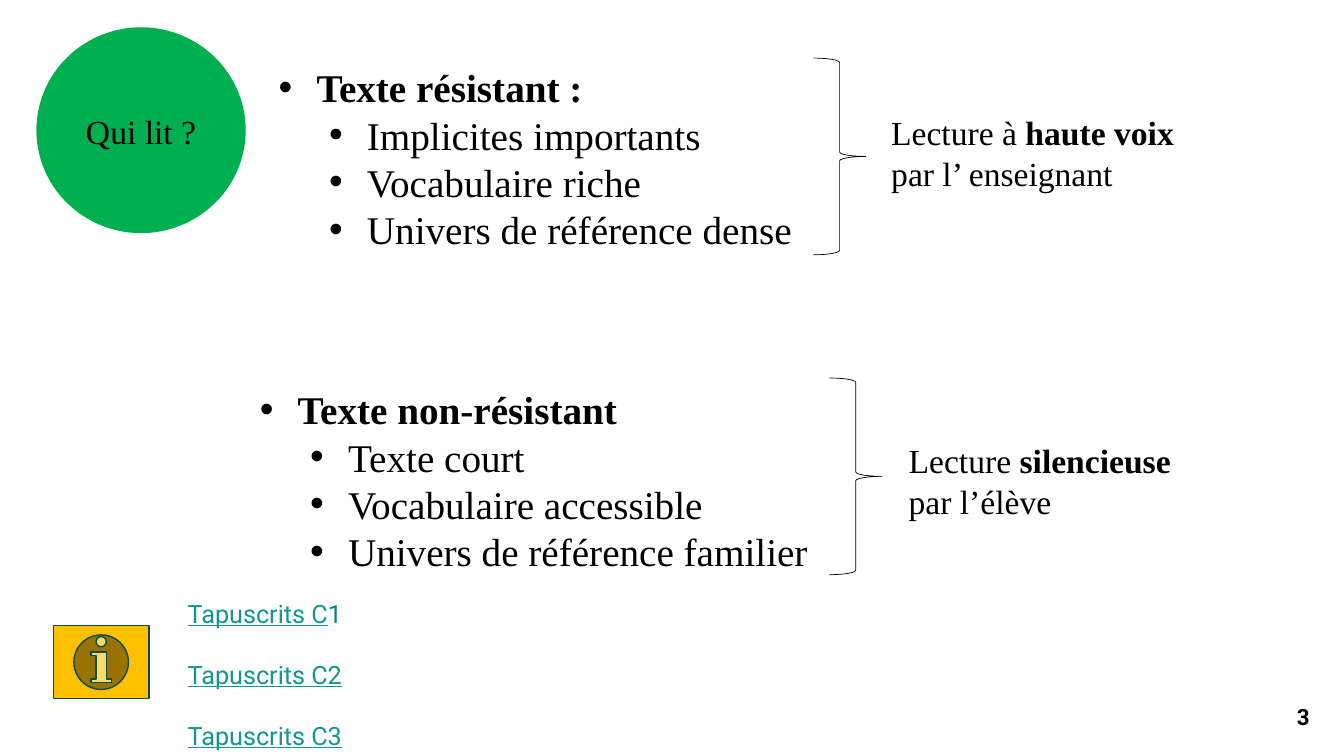
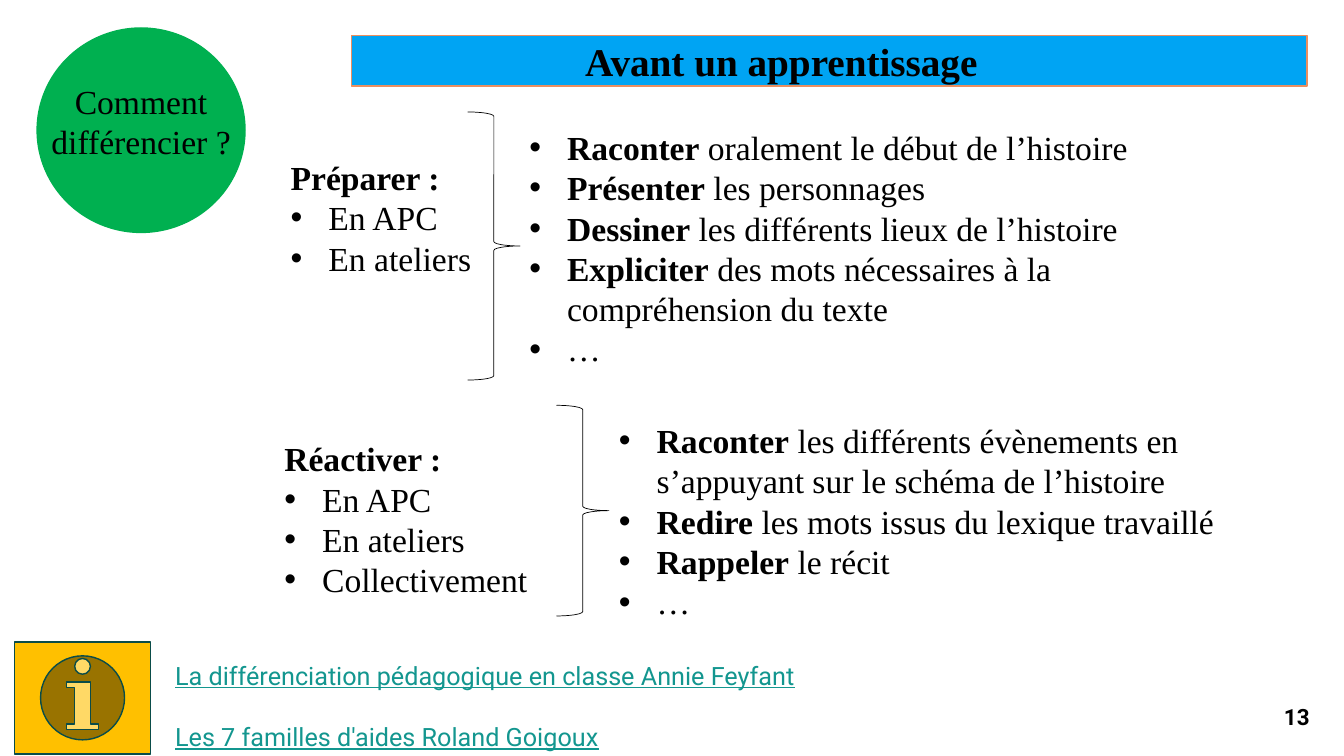
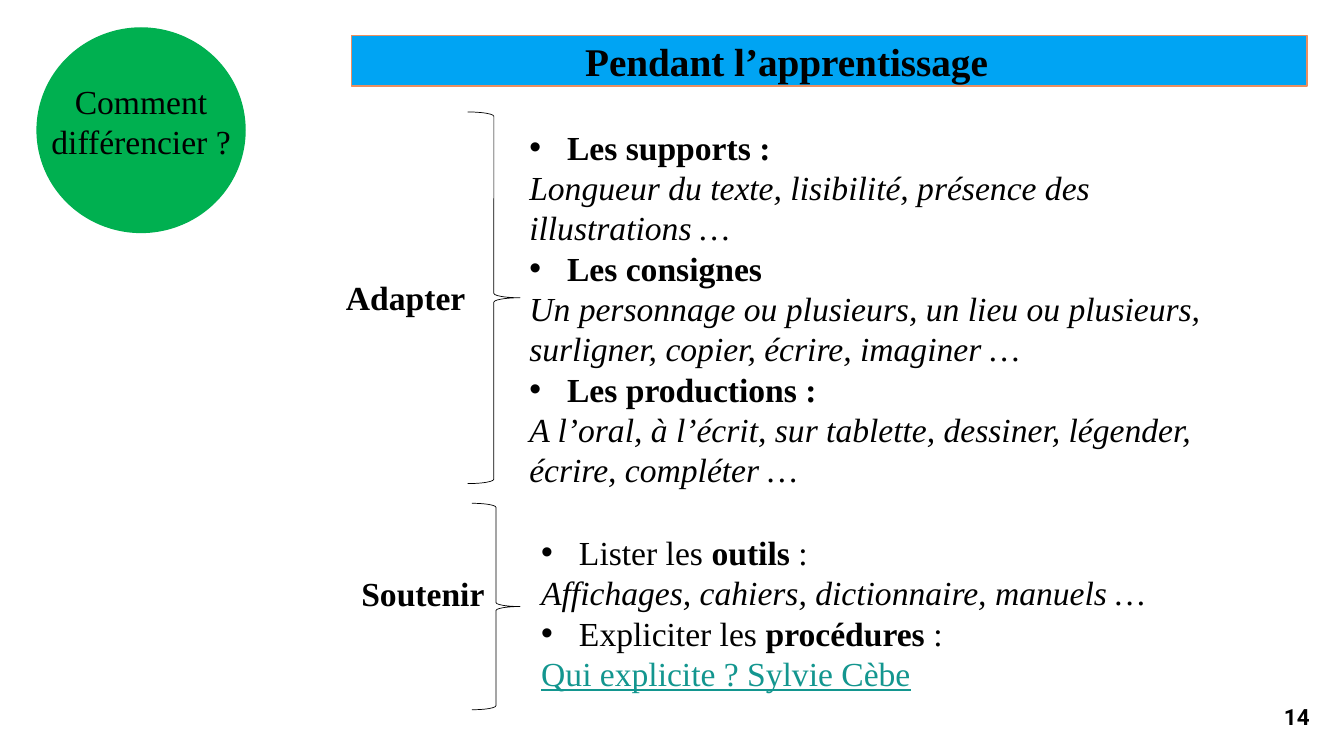
from dataclasses import dataclass

from lxml import etree
from pptx import Presentation
from pptx.dml.color import RGBColor
from pptx.enum import shapes, text
from pptx.oxml import ns
from pptx.util import Pt

# Shared look
BLACK = RGBColor(0x00, 0x00, 0x00)
GREEN = RGBColor(0x00, 0xB0, 0x50)
BLUE = RGBColor(0x00, 0xA4, 0xF3)
CORAL = RGBColor(0xEB, 0x8F, 0x60)
AMBER = RGBColor(0xFF, 0xC0, 0x00)
PINE = RGBColor(0x0A, 0x4C, 0x49)
TEAL = RGBColor(0x13, 0x96, 0x8F)
JADE = RGBColor(0x10, 0x83, 0x7D)
SERIF = "Times New Roman"
SANS = "Roboto"
INDENT = 27
STEP = 36
KIND = shapes.MSO_SHAPE


@dataclass(frozen=True)
class Run:
    text: str
    bold: bool = False
    slant: bool = False
    color: RGBColor = BLACK
    under: bool = False


@dataclass(frozen=True)
class Para:
    runs: tuple[Run, ...]
    level: int = 0  # 0 means no bullet


@dataclass(frozen=True)
class Box:
    left: float
    top: float
    width: float
    height: float

    def place(self) -> tuple:
        return Pt(self.left), Pt(self.top), Pt(self.width), Pt(self.height)


@dataclass(frozen=True)
class Block:
    box: Box
    paras: tuple[Para, ...]
    size: float = 24
    face: str = SERIF
    gap: float = 0
    align: text.PP_ALIGN = text.PP_ALIGN.LEFT
    anchor: text.MSO_ANCHOR = text.MSO_ANCHOR.TOP


@dataclass(frozen=True)
class Page:
    number: str
    topic: str
    drop: float  # top of the topic text
    blocks: tuple[Block, ...]
    braces: tuple[Box, ...]
    title: str = ""
    info: Box | None = None


# Short forms for text
def bold(words: str) -> Run:
    return Run(words, bold=True)


def link(words: str) -> Run:
    return Run(words, color=TEAL, under=True)


def line(*runs: str | Run, level: int = 0) -> Para:
    return Para(tuple(Run(r) if isinstance(r, str) else r for r in runs), level)


def item(*runs: str | Run) -> Para:
    return line(*runs, level=1)


def note(words: str) -> Para:
    return line(Run(words, slant=True))


def group(head: str, *items: str) -> tuple[Para, ...]:
    return (item(bold(head)), *(line(i, level=2) for i in items))


def phase(head: str, *items: str) -> tuple[Para, ...]:
    return (line(bold(head)), *(item(i) for i in items))


# Drawing
def style(font, run: Run) -> None:
    font.bold = run.bold
    font.italic = run.slant
    font.underline = run.under
    font.color.rgb = run.color


def bullet(para, level: int) -> None:
    para.level = level - 1
    props = para._p.get_or_add_pPr()
    props.set("marL", str(Pt(INDENT + STEP * (level - 1))))
    props.set("indent", str(-Pt(INDENT)))
    etree.SubElement(props, ns.qn("a:buFont")).set("typeface", "Arial")
    etree.SubElement(props, ns.qn("a:buChar")).set("char", "•")


def write(frame, block: Block) -> None:
    frame.word_wrap = True
    frame.vertical_anchor = block.anchor
    for n, data in enumerate(block.paras):
        para = frame.add_paragraph() if n else frame.paragraphs[0]
        if data.level:
            bullet(para, data.level)
        para.alignment = block.align
        para.space_after = Pt(block.gap)
        para.font.name = block.face
        para.font.size = Pt(block.size)
        if len(data.runs) == 1:
            style(para.font, data.runs[0])
        for part in data.runs:
            run = para.add_run()
            run.text = part.text
            if len(data.runs) > 1:
                style(run.font, part)


def label(slide, block: Block) -> None:
    write(slide.shapes.add_textbox(*block.box.place()).text_frame, block)


def figure(slide, kind: KIND, box: Box, edge: RGBColor,
           fill: RGBColor | None = None, weight: float = 1):
    shape = slide.shapes.add_shape(kind, *box.place())
    shape.shadow.inherit = False
    if fill is None:
        shape.fill.background()
    else:
        shape.fill.solid()
        shape.fill.fore_color.rgb = fill
    shape.line.color.rgb = edge
    shape.line.width = Pt(weight)
    return shape


def draw(slide, page: Page) -> None:
    # Topic disc
    figure(slide, KIND.OVAL, Box(26.5, 20, 148.5, 146), GREEN, GREEN)
    label(slide, Block(Box(26.5, page.drop, 148.5, 36), (line(page.topic),),
                       align=text.PP_ALIGN.CENTER))
    # Title band
    if page.title:
        box = Box(251, 25.5, 682.5, 36)
        band = figure(slide, KIND.RECTANGLE, box, CORAL, BLUE)
        band.text_frame.margin_left = Pt(167)
        write(band.text_frame, Block(box, (line(bold(page.title)),), size=28,
                                     anchor=text.MSO_ANCHOR.MIDDLE))
    # Content
    for brace in page.braces:
        figure(slide, KIND.RIGHT_BRACE, brace, BLACK, weight=0.5)
    for block in page.blocks:
        label(slide, block)
    if page.info:
        figure(slide, KIND.ACTION_BUTTON_INFORMATION, page.info, PINE, AMBER)
    # Page number
    label(slide, Block(Box(894, 497.5, 48.5, 29), (line(bold(page.number)),),
                       size=16, face=SANS, align=text.PP_ALIGN.RIGHT,
                       anchor=text.MSO_ANCHOR.MIDDLE))


# Content of the slides
PAGES = (
    Page(
        "3", "Qui lit ?", 75.5,
        blocks=(
            Block(Box(192, 42, 450, 143), group(
                "Texte résistant :", "Implicites importants",
                "Vocabulaire riche", "Univers de référence dense"), size=28),
            Block(Box(178.5, 272, 433, 143), group(
                "Texte non-résistant", "Texte court",
                "Vocabulaire accessible", "Univers de référence familier"),
                size=28),
            Block(Box(629.5, 76.5, 250, 65.5), (
                line("Lecture à ", bold("haute voix "), "par l’ enseignant"),)),
            Block(Box(642, 311, 211, 65.5), (
                line("Lecture ", bold("silencieuse "), "par l’élève"),)),
            Block(Box(127, 423.5, 290, 116), (
                line(link("Tapuscrits C"), Run("1", color=JADE)),
                line(link("Tapuscrits C2")),
                line(link("Tapuscrits C3"))), size=18, face=SANS, gap=22),
        ),
        braces=(Box(581, 41.5, 37.5, 140.5), Box(592.5, 270, 37.5, 140.5)),
        info=Box(38, 447, 68.5, 52),
    ),
    Page(
        "13", "Comment différencier ?", 54,
        title="Avant un apprentissage",
        blocks=(
            Block(Box(200.5, 108.5, 148.5, 124),
                  phase("Préparer :", "En APC", "En ateliers")),
            Block(Box(371, 87, 534, 181), (
                item(bold("Raconter"), " oralement le début de l’histoire"),
                item(bold("Présenter"), " les personnages"),
                item(bold("Dessiner"), " les différents lieux de l’histoire"),
                item(bold("Expliciter"),
                     " des mots nécessaires à la compréhension du texte"),
                item("…"))),
            Block(Box(196, 309.5, 214.5, 152.5),
                  phase("Réactiver :", "En APC", "En ateliers",
                        "Collectivement")),
            Block(Box(435, 296.5, 515, 181), (
                item(bold("Raconter"), " les différents évènements en "
                     "s’appuyant sur le schéma de l’histoire"),
                item(bold("Redire "), "les mots issus du lexique travaillé"),
                item(bold("Rappeler"), " le récit"),
                item("…"))),
            Block(Box(118, 468, 564, 72), (
                line(link("La différenciation pédagogique en classe "
                          "Annie Feyfant")),
                line(link("Les 7 familles d'aides Roland Goigoux"))),
                size=18, face=SANS, gap=22),
        ),
        braces=(Box(334, 80, 37.5, 191.5), Box(397.5, 289.5, 37.5, 150.5)),
        info=Box(10.5, 458.5, 97, 80),
    ),
    Page(
        "14", "Comment différencier ?", 54,
        title="Pendant l’apprentissage",
        blocks=(
            Block(Box(234, 194.5, 111.5, 36), (line(bold("Adapter")),),
                  align=text.PP_ALIGN.CENTER),
            Block(Box(371, 87, 534, 269), (
                item(bold("Les supports :")),
                note("Longueur du texte, lisibilité, présence des "
                     "illustrations …"),
                item(bold("Les consignes")),
                note("Un personnage ou plusieurs, un lieu ou plusieurs, "
                     "surligner, copier, écrire, imaginer …"),
                item(bold("Les productions :")),
                note("A l’oral, à l’écrit, sur tablette, dessiner, légender, "
                     "écrire, compléter …"))),
            Block(Box(251, 405.5, 111.5, 36), (line(bold("Soutenir")),)),
            Block(Box(379.5, 376.5, 515, 124), (
                item("Lister les ", bold("outils"), " :"),
                note("Affichages, cahiers, dictionnaire, manuels …"),
                item("Expliciter les ", bold("procédures "), ":"),
                line(link("Qui explicite ? Sylvie Cèbe")))),
        ),
        braces=(Box(334, 80, 37.5, 265.5), Box(337, 359.5, 34.5, 147.5)),
    ),
)


def main() -> None:
    deck = Presentation()
    deck.slide_width, deck.slide_height = Pt(960), Pt(540)
    for page in PAGES:
        draw(deck.slides.add_slide(deck.slide_layouts[6]), page)
    deck.save("out.pptx")


if __name__ == "__main__":
    main()
